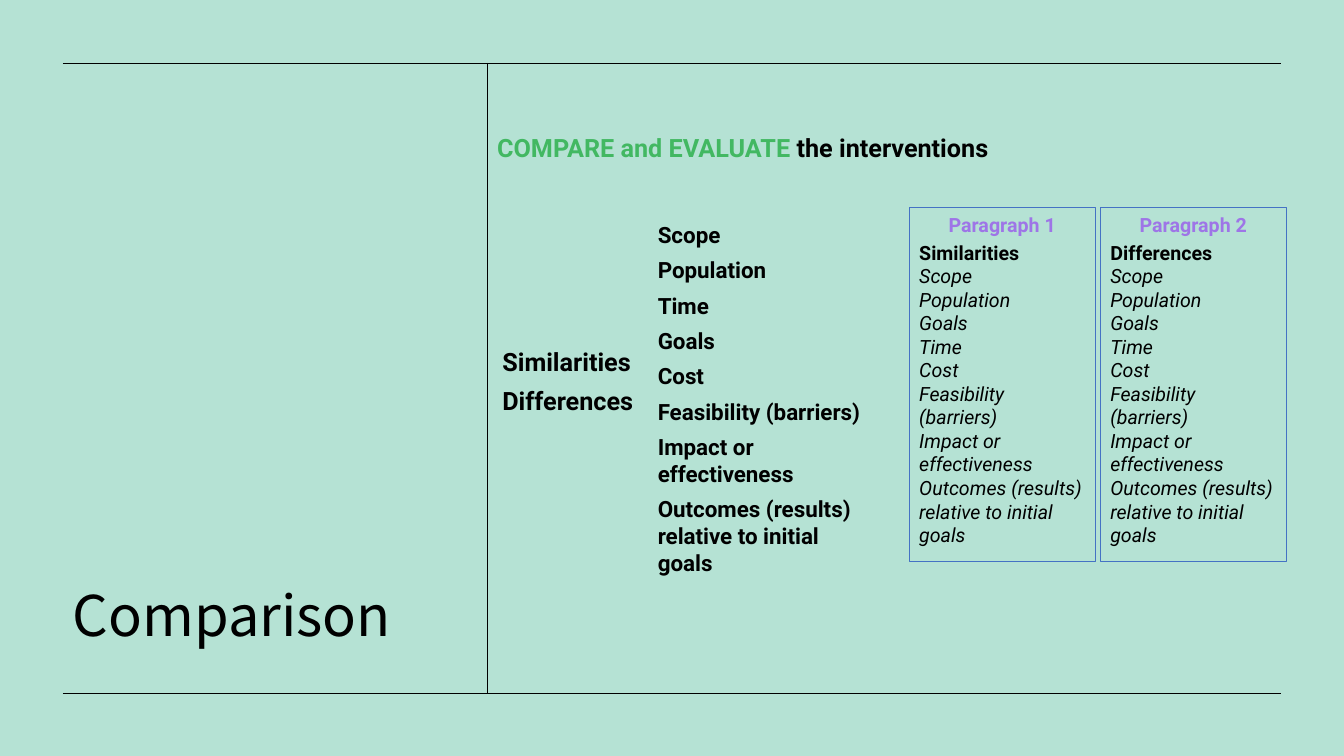
import pptx
import pptx.util
import pptx.dml.color
import pptx.enum.shapes
import pptx.enum.text
import pptx.oxml.ns
import lxml.etree

RGBColor = pptx.dml.color.RGBColor
MINT = RGBColor(0xB5, 0xE2, 0xD4)
BLACK = RGBColor(0, 0, 0)
GREEN = RGBColor(0x42, 0xB8, 0x62)
PURPLE = RGBColor(0x9E, 0x75, 0xE7)
BLUE = RGBColor(0x44, 0x72, 0xC4)

EMU_PER_PX = 9525
ANCHOR = pptx.enum.text.MSO_ANCHOR
TITLE_FONT = "Noto Sans CJK KR"
BODY_FONT = "Roboto"

LONG_CRITERIA = ["Impact or effectiveness",
                 "Outcomes (results) relative to initial goals"]
CRITERIA = ["Scope", "Population", "Time", "Goals", "Cost",
            "Feasibility (barriers)"] + LONG_CRITERIA
PLAN = ["Scope", "Population", "Goals", "Time", "Cost",
        "Feasibility (barriers)"] + LONG_CRITERIA


def px(n):
    return pptx.util.Emu(n * EMU_PER_PX)


class Deck:
    def __init__(self, width, height):
        self.prs = pptx.Presentation()
        self.prs.slide_width, self.prs.slide_height = px(width), px(height)
        self.slide = self.prs.slides.add_slide(self.prs.slide_layouts[6])
        self.slide.background.fill.solid()
        self.slide.background.fill.fore_color.rgb = MINT

    def line(self, x1, y1, x2, y2):
        c = self.slide.shapes.add_connector(
            pptx.enum.shapes.MSO_CONNECTOR.STRAIGHT, px(x1), px(y1), px(x2), px(y2))
        c.line.color.rgb = BLACK
        c.line.width = pptx.util.Pt(0.5)
        lxml.etree.SubElement(c._element.spPr, pptx.oxml.ns.qn("a:effectLst"))

    def paragraph(self, tf, text, size, color=BLACK, bold=True, italic=False,
                  after=6, font=BODY_FONT):
        """Fill the frame's first paragraph if it is empty, else append one."""
        p = tf.paragraphs[0] if not tf.text else tf.add_paragraph()
        p.text = text
        p.space_after = pptx.util.Pt(after)
        p.font.name, p.font.size = font, pptx.util.Pt(size)
        p.font.bold, p.font.italic = bold, italic
        p.font.color.rgb = color
        return p

    def text(self, x, y, w, h, lines, size, anchor=ANCHOR.TOP, **style):
        sp = self.slide.shapes.add_textbox(px(x), px(y), px(w), px(h))
        tf = sp.text_frame
        tf.word_wrap = True
        tf.vertical_anchor = anchor
        return [self.paragraph(tf, line, size, **style) for line in lines]

    def plan_box(self, x, y, w, h, heading, topic):
        sp = self.slide.shapes.add_shape(
            pptx.enum.shapes.MSO_SHAPE.RECTANGLE, px(x), px(y), px(w), px(h))
        sp.shadow.inherit = False
        sp.fill.background()
        sp.line.color.rgb = BLUE
        sp.line.width = pptx.util.Pt(0.75)
        tf = sp.text_frame
        tf.word_wrap = True
        tf.vertical_anchor = ANCHOR.TOP
        p = self.paragraph(tf, heading, 14, color=PURPLE, after=3)
        p.alignment = pptx.enum.text.PP_ALIGN.CENTER
        rest = [self.paragraph(tf, topic, 14, after=0)]
        rest += [self.paragraph(tf, item, 14, bold=False, italic=True, after=0)
                 for item in PLAN]
        for p in rest:
            p.alignment = pptx.enum.text.PP_ALIGN.LEFT


def main():
    deck = Deck(1280, 720)
    for y in (60, 660):
        deck.line(60, y, 1220, y)
    deck.line(464, 60, 464, 660)

    title, = deck.text(60, 322, 344, 300, ["Comparison"], 40, anchor=ANCHOR.BOTTOM,
                       bold=False, font=TITLE_FONT)
    title.line_spacing = 1.2

    task, = deck.text(464, 121, 684, 38, ["COMPARE and EVALUATE "], 18, color=GREEN)
    r = task.add_run()
    r.text = "the interventions"
    r.font.color.rgb = BLACK

    deck.text(469, 325, 172, 76, ["Similarities", "Differences"], 18)
    deck.text(617, 206, 225, 399, CRITERIA, 16)

    for i, topic in enumerate(["Similarities", "Differences"]):
        deck.plan_box(866 + 182 * i, 198, 177, 337, f"Paragraph {i + 1}", topic)

    deck.prs.save("out.pptx")


if __name__ == "__main__":
    main()
